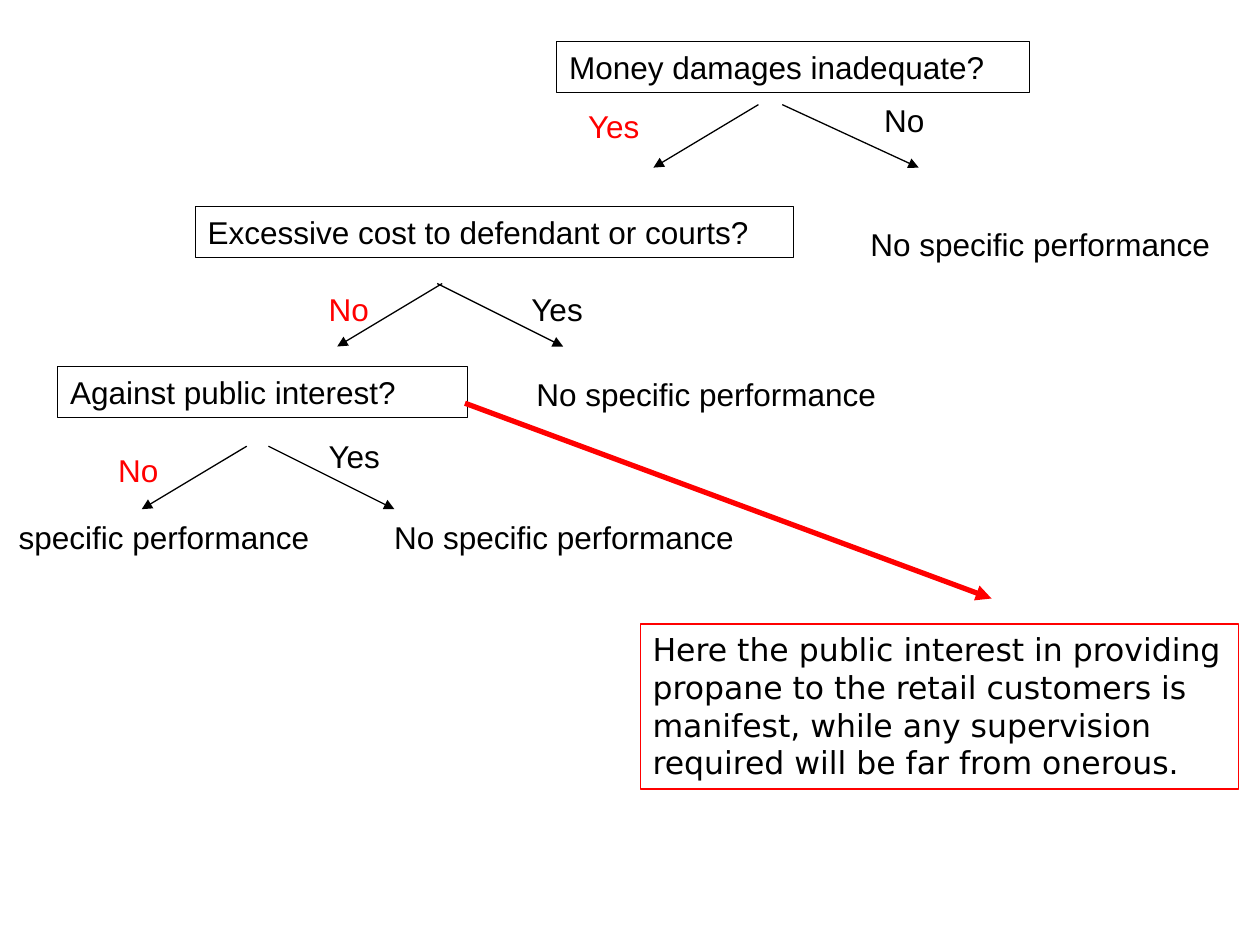
"""Build a decision tree slide on when specific performance is granted."""
from lxml.etree import SubElement
from pptx import Presentation
from pptx.dml.color import RGBColor
from pptx.enum.shapes import MSO_CONNECTOR, MSO_SHAPE
from pptx.enum.text import MSO_AUTO_SIZE, PP_ALIGN, MSO_ANCHOR
from pptx.oxml.ns import qn
from pptx.util import Pt

BLACK, RED = "000000", "FF0000"
ROW_HEIGHT = 29
ARROW_DROP = 36
DENIED = "No specific performance"
CONCLUSION = (
    "Here the public interest in providing propane to the retail customers is "
    "manifest, while any supervision required will be far from onerous."
)

# text, left, top, width
QUESTIONS = [
    ("Money damages inadequate?", 318.2, 23.8, 270),
    ("Excessive cost to defendant or courts?", 111.6, 118, 342),
    ("Against public interest?", 33, 209.5, 234),
]
ANSWERS = [
    ("Yes", 329, 57.6, RED),
    ("No", 498.2, 54, BLACK),
    ("Yes", 296.6, 162, BLACK),
    ("No", 180.7, 162, RED),
    ("Yes", 180.7, 246.2, BLACK),
    ("No", 60.5, 254, RED),
]
ANSWER_WIDTHS = {"Yes": 72, "No": 42}
OUTCOMES = [
    (DENIED, 490.3, 125.3),
    (DENIED, 299.5, 211),
    (DENIED, 218.2, 292.3),
    ("specific performance", 3.6, 292.3),
]
OUTCOME_WIDTH = 222
# top, then start and run of each branch
BRANCHES = [
    (59.8, (433.4, -60), (447, 78)),
    (162, (252.7, -60), (249.8, 72)),
    (255, (141, -60), (153.4, 72)),
]


def color(value):
    return RGBColor.from_string(value)


def write(shape, text, ink=BLACK, font="Arial"):
    frame = shape.text_frame
    frame.text = text
    frame.word_wrap = True
    frame.auto_size = MSO_AUTO_SIZE.SHAPE_TO_FIT_TEXT
    frame.vertical_anchor = MSO_ANCHOR.TOP
    paragraph = frame.paragraphs[0]
    paragraph.alignment = PP_ALIGN.LEFT
    for run in paragraph.runs:
        run.font.name = font
        run.font.size = Pt(18)
        run.font.color.rgb = color(ink)


def add_label(slide, text, left, top, width, ink=BLACK):
    label = slide.shapes.add_textbox(Pt(left), Pt(top), Pt(width), Pt(ROW_HEIGHT))
    write(label, text, ink)


def add_box(slide, text, left, top, width, height=ROW_HEIGHT, border=BLACK, font="Arial"):
    box = slide.shapes.add_shape(
        MSO_SHAPE.RECTANGLE, Pt(left), Pt(top), Pt(width), Pt(height))
    box.shadow.inherit = False
    box.fill.background()
    box.line.color.rgb = color(border)
    box.line.width = Pt(0.75)
    write(box, text, font=font)


def add_arrow(slide, start, end, ink=BLACK, weight=0.75):
    arrow = slide.shapes.add_connector(
        MSO_CONNECTOR.STRAIGHT, *(Pt(value) for value in (*start, *end)))
    arrow.line.color.rgb = color(ink)
    arrow.line.width = Pt(weight)
    SubElement(arrow.line._get_or_add_ln(), qn("a:tailEnd"), type="triangle")
    SubElement(arrow._element.spPr, qn("a:effectLst"))


def main():
    deck = Presentation()
    deck.slide_width, deck.slide_height = Pt(720), Pt(540)
    slide = deck.slides.add_slide(deck.slide_layouts[6])
    for question in QUESTIONS:
        add_box(slide, *question)
    for top, *sides in BRANCHES:
        for left, run in sides:
            add_arrow(slide, (left, top), (left + run, top + ARROW_DROP))
    for text, left, top, ink in ANSWERS:
        add_label(slide, text, left, top, ANSWER_WIDTHS[text], ink)
    for text, left, top in OUTCOMES:
        add_label(slide, text, left, top, OUTCOME_WIDTH)
    add_box(slide, CONCLUSION, 365.8, 356.5, 342, 94.3, RED, "DejaVu Sans")
    add_arrow(slide, (265.7, 230.4), (566.6, 342), RED, 3)
    deck.save("out.pptx")


if __name__ == "__main__":
    main()
